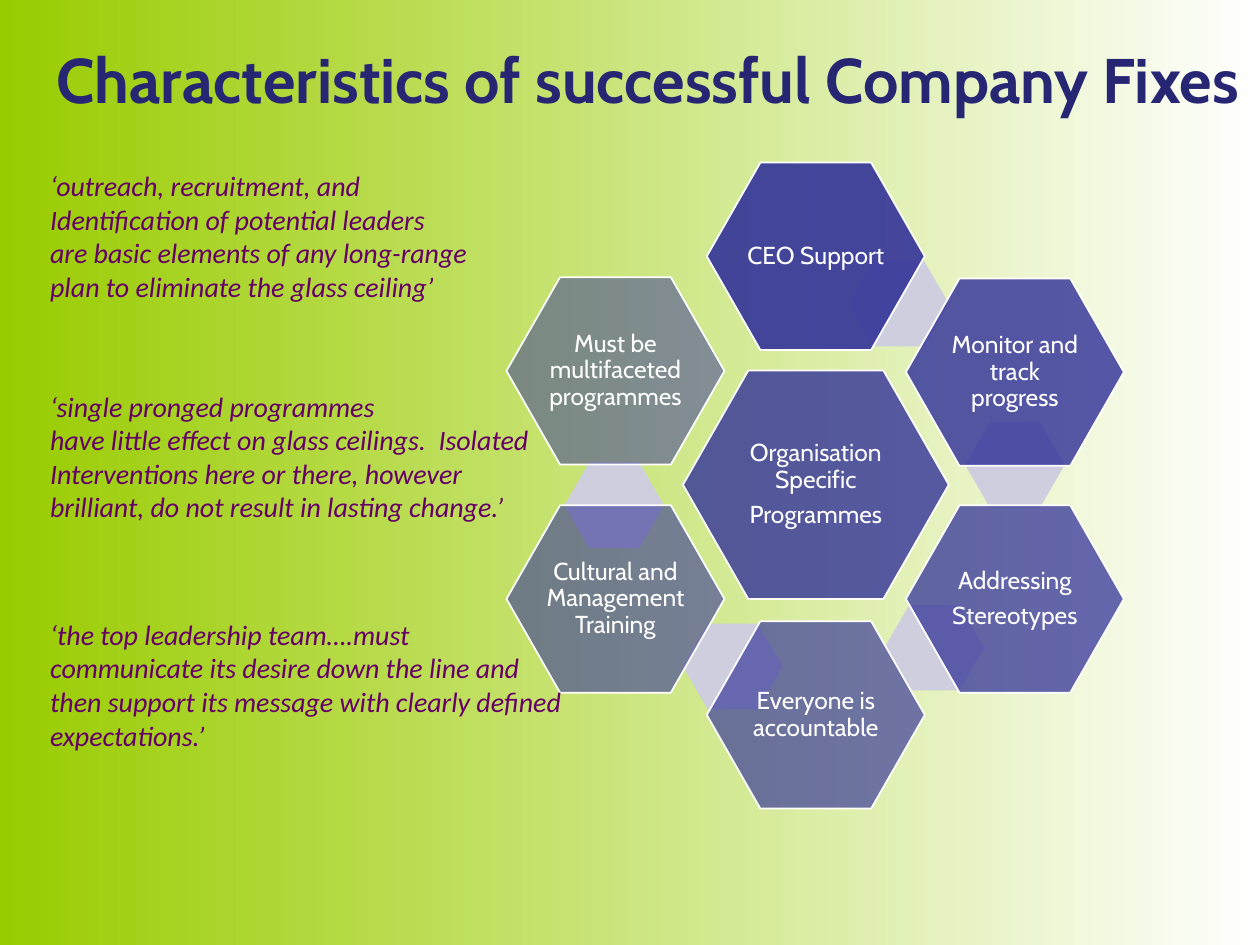
from lxml import etree
from pptx import Presentation
from pptx import util as u
from pptx.dml.color import RGBColor
from pptx.enum import shapes, text
from pptx.oxml import ns


def color(hex_value):
    return RGBColor.from_string(hex_value)


def add_hexagon(left, top, width, height, fill, adjustment):
    hexagon = slide.shapes.add_shape(
        shapes.MSO_SHAPE.HEXAGON,
        u.Inches(left), u.Inches(top), u.Inches(width), u.Inches(height))
    hexagon.shadow.inherit = False
    hexagon.adjustments[0] = adjustment
    hexagon.fill.solid()
    hexagon.fill.fore_color.rgb = color(fill)
    hexagon.line.fill.background()
    return hexagon


presentation = Presentation()
presentation.slide_width = u.Inches(10)
presentation.slide_height = u.Inches(7.5)
slide = presentation.slides.add_slide(presentation.slide_layouts[6])

background = slide.background.fill
background.gradient()
background.gradient_angle = 0
for stop, position, shade in zip(background.gradient_stops, (0, 1), ("99CC00", "FFFFFF")):
    stop.position = position
    stop.color.rgb = color(shade)

# Title
title = slide.shapes.add_textbox(u.Inches(0.35), 0, u.Inches(9.84), u.Inches(1.25))
title.text_frame.word_wrap = True
title.text_frame.vertical_anchor = text.MSO_ANCHOR.MIDDLE
paragraph = title.text_frame.paragraphs[0]
paragraph.text = "Characteristics of successful Company Fixes"
paragraph.font.name = "Cabin"
paragraph.font.size = u.Pt(36)
paragraph.font.bold = True
paragraph.font.color.rgb = color("262673")

# Hexagon ring: left, top, width, opacity in percent, label, linking hexagon behind
ring = [
    (5.42, 2.94, 2.11, 80, "Organisation Specific\nProgrammes", None),
    (5.61, 1.29, 1.73, 90, "CEO Support", (6.74, 2.07)),
    (7.19, 2.21, 1.73, 82, "Monitor and track progress", (7.66, 3.35)),
    (7.19, 4.01, 1.73, 74, "Addressing\nStereotypes", (7.02, 4.8)),
    (5.61, 4.93, 1.73, 66, "Everyone is accountable", (5.42, 4.95)),
    (4.02, 4.01, 1.73, 58, "Cultural and Management Training", (4.48, 3.67)),
    (4.02, 2.2, 1.73, 50, "Must be multifaceted programmes", None),
]
for left, top, width, opacity, label, link in ring:
    if link:
        add_hexagon(*link, 0.79, 0.68, "CECEDE", 0.289)

    height = width * 0.86
    hexagon = add_hexagon(left, top, width, height, "333399", 0.286)
    hexagon.line.color.rgb = color("FFFFFF")
    hexagon.line.width = u.Pt(1)
    fill_color = hexagon.fill._xPr.find(ns.qn("a:solidFill"))[0]
    etree.SubElement(fill_color, ns.qn("a:alpha"), val=str(opacity * 1000))

    # The label takes the middle two thirds of its hexagon
    box = slide.shapes.add_textbox(
        u.Inches(left + width / 6), u.Inches(top + height / 6),
        u.Inches(width * 2 / 3), u.Inches(height * 2 / 3))
    frame = box.text_frame
    frame.word_wrap = True
    frame.vertical_anchor = text.MSO_ANCHOR.MIDDLE
    frame.margin_left = frame.margin_right = u.Inches(0.02)
    frame.margin_top = frame.margin_bottom = u.Inches(0.02)
    frame.text = label
    for paragraph in frame.paragraphs:
        paragraph.alignment = text.PP_ALIGN.CENTER
        paragraph.line_spacing = 0.9
        paragraph.space_after = u.Pt(5)
        paragraph.font.name = "Cabin"
        paragraph.font.size = u.Pt(14)
        paragraph.font.color.rgb = color("FFFFFF")

# Quotations
quotations = [
    (1.29, 3.57, "‘outreach, recruitment, and\n"
                 "Identification of potential leaders\n"
                 "are basic elements of any long-range\n"
                 "plan to eliminate the glass ceiling’"),
    (3.04, 4.06, "‘single pronged programmes\n"
                 "have little effect on glass ceilings.  Isolated\n"
                 "Interventions here or there, however\n"
                 "brilliant, do not result in lasting change.’"),
    (4.85, 4.43, "‘the top leadership team….must\n"
                 "communicate its desire down the line and\n"
                 "then support its message with clearly defined\n"
                 "expectations.’"),
]
for top, width, quotation in quotations:
    box = slide.shapes.add_textbox(
        u.Inches(0.3), u.Inches(top), u.Inches(width), u.Inches(1.18))
    box.text_frame.word_wrap = False
    box.text_frame.auto_size = text.MSO_AUTO_SIZE.SHAPE_TO_FIT_TEXT
    box.text_frame.text = quotation
    for paragraph in box.text_frame.paragraphs:
        paragraph.font.name = "Calibri"
        paragraph.font.size = u.Pt(16)
        paragraph.font.italic = True
        paragraph.font.color.rgb = color("660066")

presentation.save("out.pptx")
